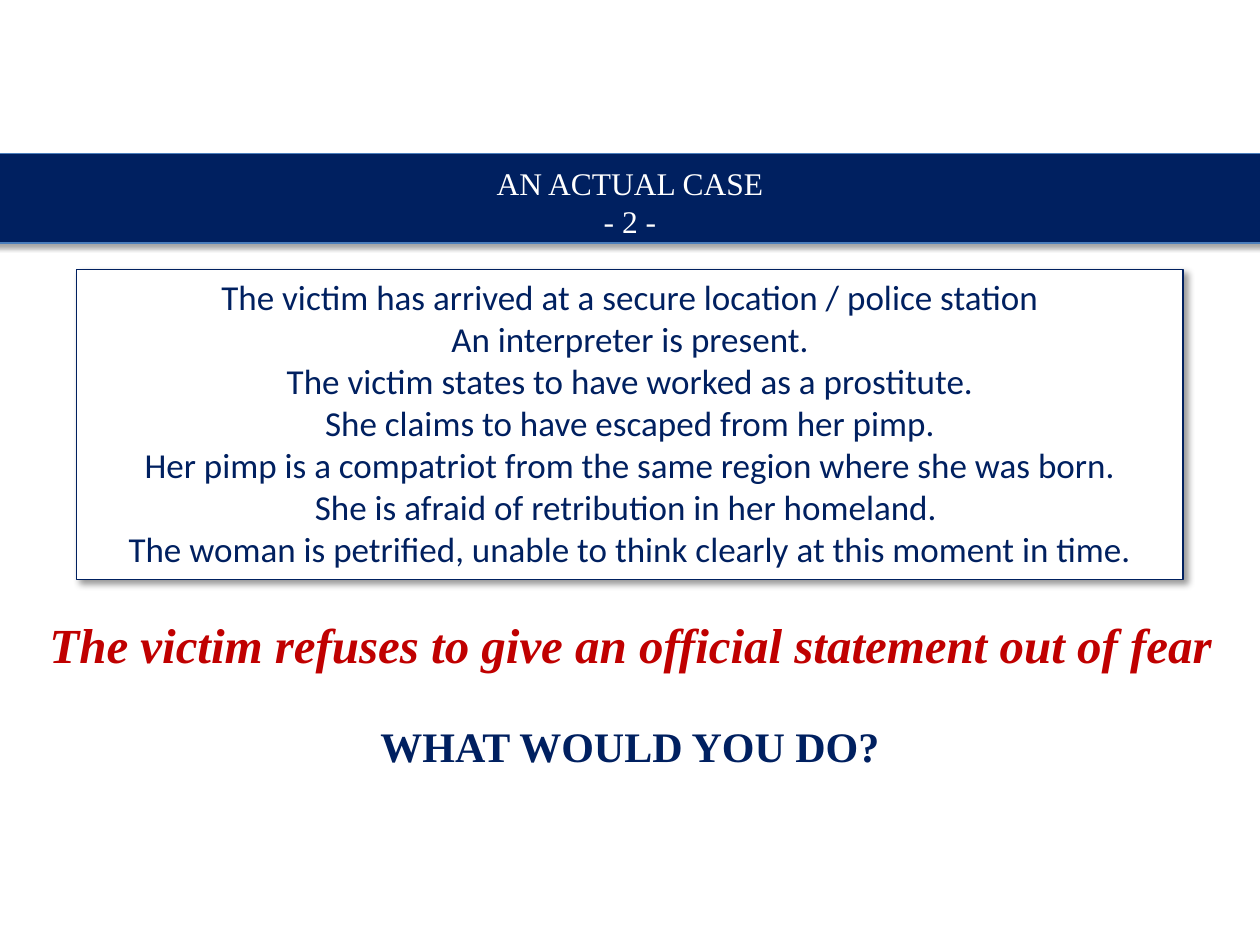
"""Build the slide on the second step of an actual case."""
from lxml import etree
from pptx import Presentation
from pptx import util as u
from pptx.dml.color import RGBColor
from pptx.enum import shapes, text
from pptx.oxml import ns

HUES = {"navy": "002060", "red": "C00000", "white": "FFFFFF",
        "edge": "4B7EBC", "black": "000000"}
SERIF = "Times New Roman"
FACTS = [
    "The victim has arrived at a secure location / police station",
    "An interpreter is present.",
    "The victim states to have worked as a prostitute.",
    "She claims to have escaped from her pimp.",
    "Her pimp is a compatriot from the same region where she was born.",
    "She is afraid of retribution in her homeland. ",
    "The woman is petrified, unable to think clearly at this moment in time.",
]


class Deck:
    """Hold the style and the current slide."""

    def __init__(self):
        """Start a deck with one title-only slide."""
        self.file = Presentation()
        self.file.slide_width, self.file.slide_height = u.Inches(10), u.Inches(7.5)
        self.slide = self.file.slides.add_slide(self.file.slide_layouts[5])

    def hue(self, name):
        """Return a named colour."""
        return RGBColor.from_string(HUES[name])

    def letter(self, shape, lines, size, hue, font=SERIF, bold=False, slant=False):
        """Fill a shape with centred lines."""
        frame = shape.text_frame
        frame.text = "\n".join(lines)
        frame.word_wrap = True
        frame.auto_size = text.MSO_AUTO_SIZE.NONE
        frame.vertical_anchor = text.MSO_ANCHOR.TOP
        for para in frame.paragraphs:
            para.alignment = text.PP_ALIGN.CENTER
            para.font.name, para.font.size = font, u.Pt(size)
            para.font.bold, para.font.italic = bold, slant
            para.font.color.rgb = self.hue(hue)

    def shade(self, shape, alpha, blur, dist, angle):
        """Give a shape an outer shadow."""
        shape.shadow.inherit = False
        effects = shape.element.spPr.find(ns.qn("a:effectLst"))
        outer = etree.SubElement(
            effects, ns.qn("a:outerShdw"), blurRad=str(u.Pt(blur)),
            dist=str(u.Pt(dist)), dir=str(angle * 60000), rotWithShape="0")
        tint = etree.SubElement(outer, ns.qn("a:srgbClr"), val=HUES["black"])
        etree.SubElement(tint, ns.qn("a:alpha"), val=str(alpha * 1000))

    def panel(self, area, fill, line, shadow):
        """Add a shadowed rectangle."""
        box = self.slide.shapes.add_shape(
            shapes.MSO_SHAPE.RECTANGLE, *map(u.Inches, area))
        box.fill.solid()
        box.fill.fore_color.rgb = self.hue(fill)
        box.line.color.rgb = self.hue(line)
        box.line.width = u.Pt(0.75)
        self.shade(box, *shadow)
        return box

    def label(self, area, words, size, hue, **style):
        """Add a one-line text box."""
        box = self.slide.shapes.add_textbox(*map(u.Inches, area))
        self.letter(box, [words], size, hue, **style)

    def title(self, area, lines, size, hue):
        """Place the title in front of the shapes drawn so far."""
        head = self.slide.shapes.title
        head.left, head.top, head.width, head.height = map(u.Inches, area)
        self.letter(head, lines, size, hue)
        self.slide.shapes.element.append(head.element)


def main():
    """Draw the slide and save it."""
    deck = Deck()
    case = deck.panel((0.61, 2.14, 8.78, 2.46), "white", "navy", (40, 4, 3, 45))
    deck.letter(case, FACTS, 20, "navy", font="Calibri")
    deck.label((0.21, 4.83, 9.59, 0.57),
               "The victim refuses to give an official statement out of fear",
               28, "red", bold=True, slant=True)
    deck.label((0.41, 5.67, 9.18, 0.5), "WHAT WOULD YOU DO?", 24, "navy", bold=True)
    deck.panel((-0.1, 1.22, 10.17, 0.71), "navy", "edge", (35, 3.1, 1.8, 90))
    deck.title((0.41, 1.25, 9.18, 0.71), ["AN ACTUAL CASE", "- 2 -"], 18, "white")
    deck.file.save("out.pptx")


if __name__ == "__main__":
    main()
